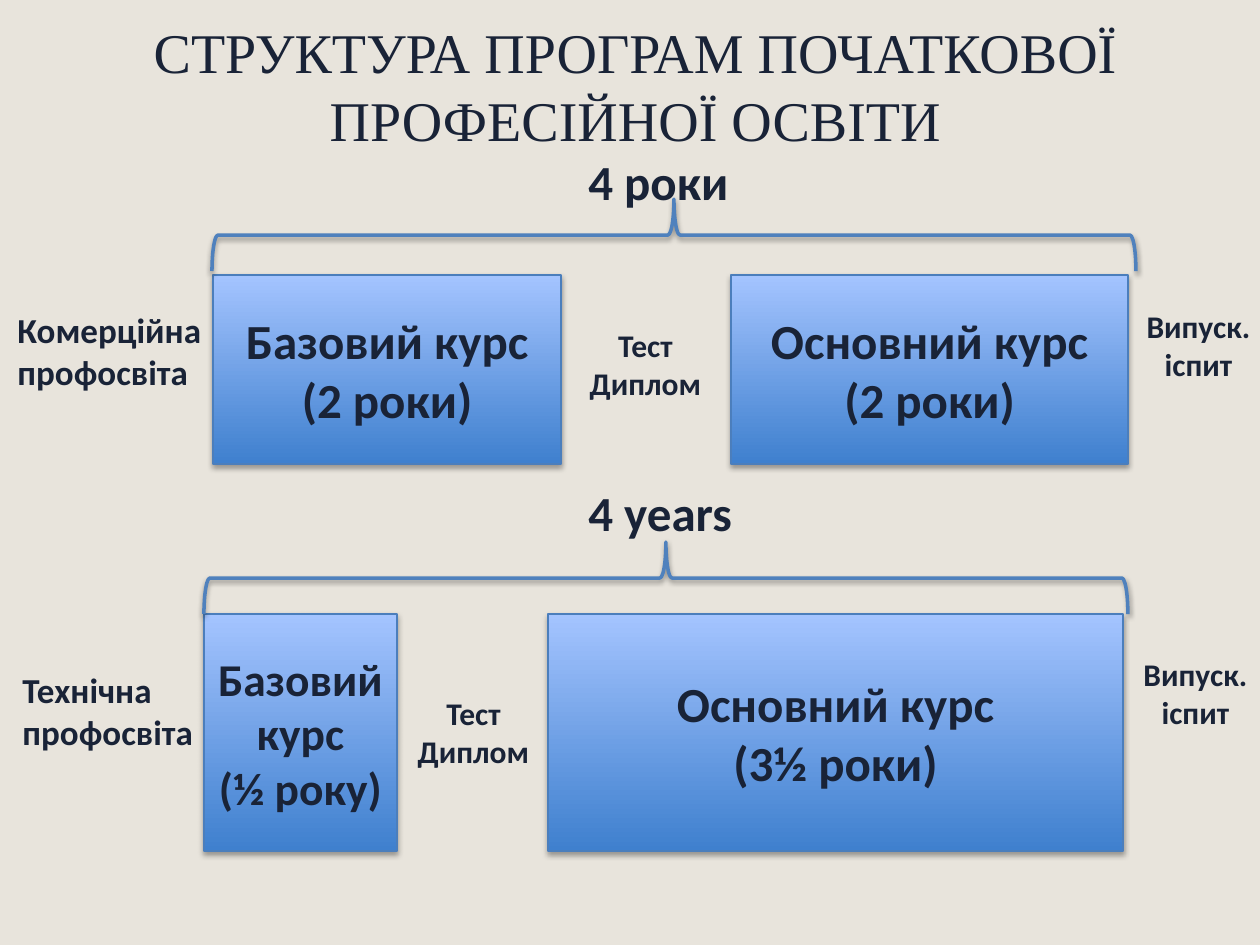
from dataclasses import dataclass

from lxml import etree
from pptx import Presentation
from pptx import util as u
from pptx.dml.color import RGBColor
from pptx.enum import shapes, text
from pptx.oxml.ns import qn

PX = u.Inches(1) // 126
CENTER = text.PP_ALIGN.CENTER
MIDDLE = text.MSO_ANCHOR.MIDDLE


@dataclass(frozen=True)
class Theme:
    """Colours, fonts and type sizes of the slide."""
    background: str = "E8E4DC"
    ink: str = "192337"
    course_bottom: str = "3F80CE"
    course_top: str = "A4C4FF"
    course_line: str = "4B7EBC"
    brace_line: str = "4F81BD"
    title_font: str = "Times New Roman"
    body_font: str = "Calibri"
    title_size: int = 32
    course_size: int = 28
    narrow_size: int = 26
    track_size: int = 20
    note_size: int = 18


THEME = Theme()


def color(value):
    """Turn a hex string into a colour."""
    return RGBColor.from_string(value)


def place(*lengths):
    """Turn px lengths into EMU."""
    return [length * PX for length in lengths]


def write(shape, content, size, font=THEME.body_font, bold=True,
          align=None, anchor=text.MSO_ANCHOR.TOP):
    """Fill a shape with formatted lines of text."""
    frame = shape.text_frame
    frame.word_wrap = True
    frame.vertical_anchor = anchor
    for index, line in enumerate(content.split("\n")):
        para = frame.paragraphs[0] if index == 0 else frame.add_paragraph()
        para.alignment = align
        span = para.add_run()
        span.text = line
        span.font.name = font
        span.font.size = u.Pt(size)
        span.font.bold = bold
        span.font.color.rgb = color(THEME.ink)


def add_label(page, frame, content, size, **style):
    """Add a text box."""
    write(page.shapes.add_textbox(*place(*frame)), content, size, **style)


def add_shadow(shape, distance, opacity):
    """Give a shape a soft shadow that falls straight down."""
    shape.shadow.inherit = False
    effects = shape._element.spPr.find(qn("a:effectLst"))
    shadow = etree.SubElement(effects, qn("a:outerShdw"), blurRad="40000", dist=str(distance),
                              dir="5400000", rotWithShape="0")
    tint = etree.SubElement(shadow, qn("a:srgbClr"), val="000000")
    etree.SubElement(tint, qn("a:alpha"), val=str(opacity * 1000))


def add_course(page, frame, content, size=THEME.course_size):
    """Add a course block with a vertical gradient."""
    box = page.shapes.add_shape(shapes.MSO_SHAPE.RECTANGLE, *place(*frame))
    box.fill.gradient()
    box.fill.gradient_angle = 90
    for stop, value, position in zip(box.fill.gradient_stops,
                                     (THEME.course_bottom, THEME.course_top), (0, 1)):
        stop.color.rgb = color(value)
        stop.position = position
    box.line.color.rgb = color(THEME.course_line)
    box.line.width = u.Pt(0.75)
    add_shadow(box, 23000, 35)
    write(box, content, size, align=CENTER, anchor=MIDDLE)


def add_brace(page, center_x, center_y, span=924, depth=72):
    """Add a brace that points up, given its middle."""
    frame = place(center_x - depth // 2, center_y - span // 2, depth, span)
    brace = page.shapes.add_shape(shapes.MSO_SHAPE.RIGHT_BRACE, *frame)
    brace.rotation = 270
    brace.fill.background()
    brace.line.color.rgb = color(THEME.brace_line)
    brace.line.width = u.Pt(2)
    add_shadow(brace, 20000, 38)


def add_track(page, name, duration, brace, basic, main_course):
    """Add one programme: its name, courses, notes, brace and duration."""
    add_course(page, *basic)
    add_course(page, *main_course)
    add_label(page, *name, THEME.track_size)
    add_brace(page, *brace)
    add_label(page, *duration, THEME.course_size)


def add_note(page, left, top, content):
    """Add a small centred note beside a course."""
    add_label(page, (left, top, 149, 89), content, THEME.note_size, align=CENTER)


def main():
    """Build and save the slide."""
    deck = Presentation()
    deck.slide_width, deck.slide_height = place(1260, 945)
    page = deck.slides.add_slide(deck.slide_layouts[6])
    page.background.fill.solid()
    page.background.fill.fore_color.rgb = color(THEME.background)

    add_label(page, (35, 6, 1201, 158), "СТРУКТУРА ПРОГРАМ ПОЧАТКОВОЇ ПРОФЕСІЙНОЇ ОСВІТИ",
              THEME.title_size, font=THEME.title_font, bold=False,
              align=CENTER, anchor=MIDDLE)
    add_track(page,
              name=((5, 302, 218, 97), "Комерційна профосвіта"),
              duration=((576, 145, 218, 72), "4 роки"),
              brace=(674, 235),
              basic=((213, 275, 348, 189), "Базовий курс\n(2 роки)"),
              main_course=((731, 275, 397, 189), "Основний курс\n(2 роки)"))
    add_track(page,
              name=((10, 662, 218, 97), "Технічна профосвіта"),
              duration=((576, 476, 218, 72), "4 years"),
              brace=(666, 578),
              basic=((204, 614, 193, 237), "Базовий курс\n(½ року)", THEME.narrow_size),
              main_course=((548, 614, 575, 237), "Основний курс\n(3½ роки)"))
    for left, top in ((571, 320), (399, 688)):
        add_note(page, left, top, "Тест\nДиплом")
    for left, top in ((1124, 301), (1121, 649)):
        add_note(page, left, top, "Випуск. іспит")
    deck.save("out.pptx")


if __name__ == "__main__":
    main()
